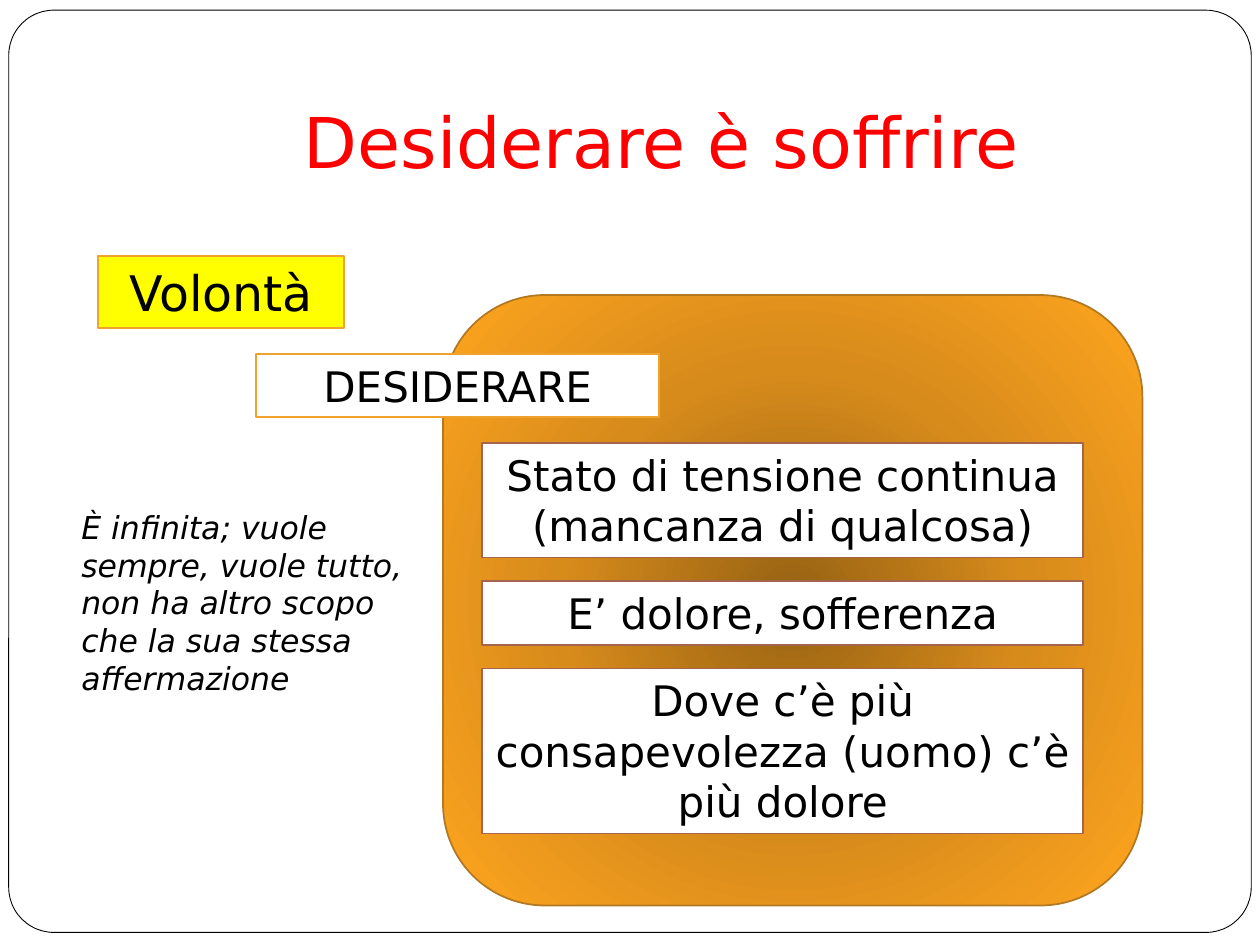
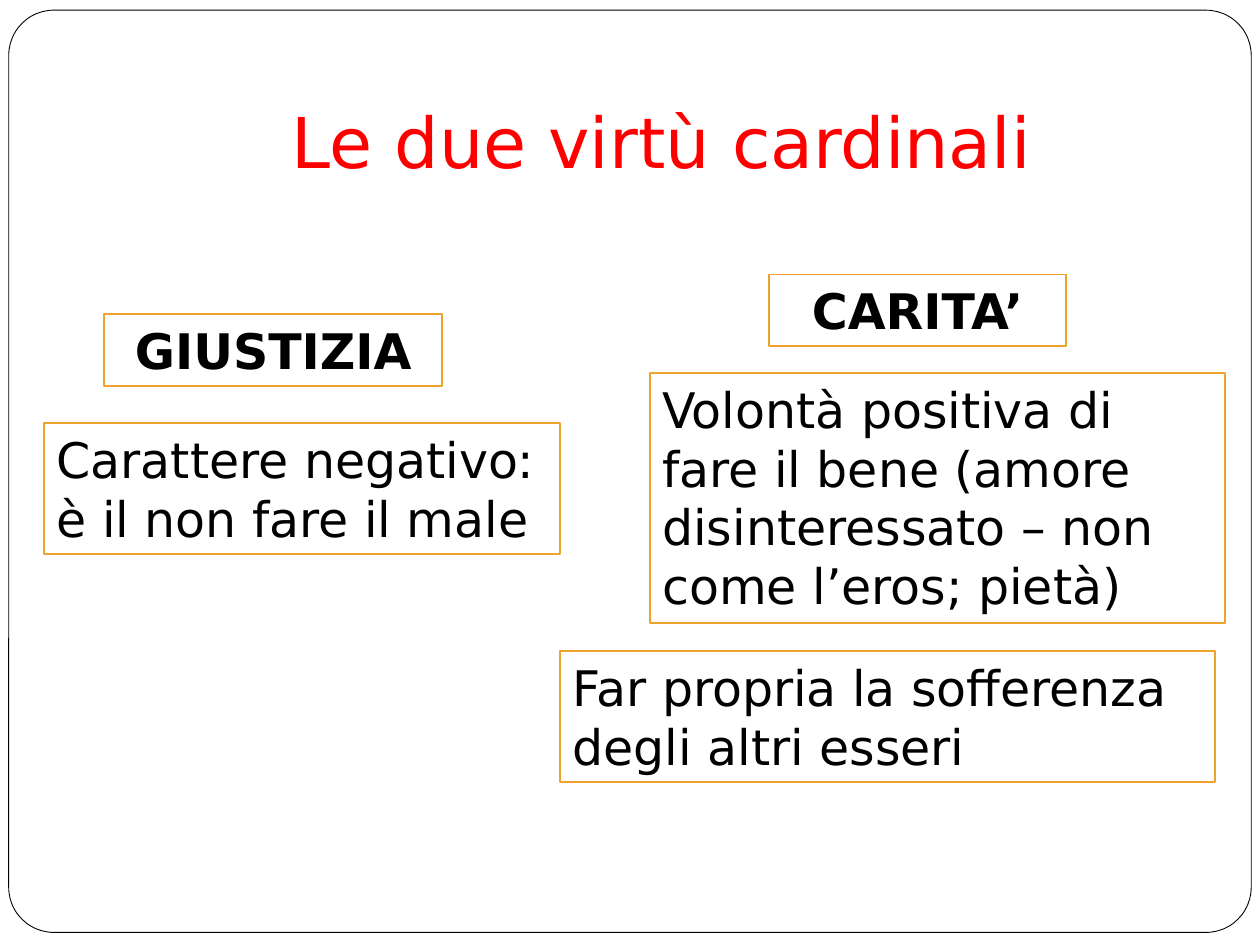
"""Build two slides on desire as suffering and the two cardinal virtues."""
from pptx import Presentation
from pptx.dml.color import RGBColor
from pptx.enum.shapes import MSO_SHAPE
from pptx.enum.text import MSO_ANCHOR, MSO_AUTO_SIZE, PP_ALIGN
from pptx.oxml import parse_xml
from pptx.oxml.ns import nsdecls, qn
from pptx.util import Pt

ROUNDED = MSO_SHAPE.ROUNDED_RECTANGLE
BOTTOM = MSO_ANCHOR.BOTTOM
GROW = MSO_AUTO_SIZE.SHAPE_TO_FIT_TEXT
LEFT, CENTER = PP_ALIGN.LEFT, PP_ALIGN.CENTER

WHITE = RGBColor(0xFF, 0xFF, 0xFF)
BLACK = RGBColor(0x00, 0x00, 0x00)
RED = RGBColor(0xFF, 0x00, 0x00)
YELLOW = RGBColor(0xFF, 0xFF, 0x00)
ORANGE = RGBColor(0xF0, 0xA2, 0x2E)
BROWN = RGBColor(0xA5, 0x64, 0x4E)
PANEL_LINE = RGBColor(0xB2, 0x78, 0x22)
PANEL_STOPS = (
    (0, RGBColor(0x97, 0x62, 0x13)),
    (50, RGBColor(0xD7, 0x8B, 0x1B)),
    (100, RGBColor(0xFF, 0xA5, 0x1F)),
)

FONT = "DejaVu Sans"
LINE_SPACING = 1.21
PADDING = 7.2


class Deck:
    """Hold the shared style and the current slide."""

    def __init__(self):
        self.prs = Presentation()
        self.prs.slide_width, self.prs.slide_height = Pt(720), Pt(540)
        self.s = None

    def slide(self):
        """Start a slide with its rounded frame."""
        self.s = self.prs.slides.add_slide(self.prs.slide_layouts[6])
        frame = self.rounded(5, 5.8, 710, 527, BLACK, 0.5)
        frame.adjustments[0] = 0.049
        frame.fill.solid()
        frame.fill.fore_color.rgb = WHITE

    def heading(self, text):
        """Add the slide title, resting on the bottom of its area."""
        sp = self.s.shapes.add_textbox(Pt(72), Pt(21.6), Pt(612), Pt(90))
        tf = sp.text_frame
        tf.vertical_anchor = BOTTOM
        tf.margin_bottom = Pt(PADDING)
        self.paragraph(tf, text, 40, RED, CENTER)

    def rounded(self, x, y, w, h, line, width):
        """Add an outlined rounded rectangle."""
        sp = self.s.shapes.add_shape(ROUNDED, Pt(x), Pt(y), Pt(w), Pt(h))
        sp.shadow.inherit = False
        sp.line.color.rgb = line
        sp.line.width = Pt(width)
        return sp

    def panel(self, x, y, w, h):
        """Add a rounded panel that shades from its centre outwards."""
        sp = self.rounded(x, y, w, h, PANEL_LINE, 1)
        sp.fill.gradient()
        stops = "".join(
            f'<a:gs pos="{pos * 1000}"><a:srgbClr val="{color}"/></a:gs>'
            for pos, color in PANEL_STOPS
        )
        grad = parse_xml(
            f'<a:gradFill {nsdecls("a")} rotWithShape="1"><a:gsLst>{stops}</a:gsLst>'
            '<a:path path="circle"><a:fillToRect l="50000" t="50000" r="50000" b="50000"/>'
            "</a:path></a:gradFill>"
        )
        sp_pr = sp._element.spPr
        sp_pr.replace(sp_pr.find(qn("a:gradFill")), grad)

    def paragraph(self, tf, text, size, color=BLACK, align=LEFT, bold=False, italic=False):
        """Fill a text frame with one wrapped paragraph."""
        tf.word_wrap = True
        p = tf.paragraphs[0]
        p.alignment = align
        r = p.add_run()
        r.text = text
        r.font.name = FONT
        r.font.size = Pt(size)
        r.font.bold = bold
        r.font.italic = italic
        r.font.color.rgb = color

    def note(self, x, y, w, lines, text, size, **style):
        """Add a text box as tall as its lines."""
        h = PADDING + lines * size * LINE_SPACING
        sp = self.s.shapes.add_textbox(Pt(x), Pt(y), Pt(w), Pt(h))
        sp.text_frame.auto_size = GROW
        self.paragraph(sp.text_frame, text, size, **style)
        return sp

    def box(self, x, y, w, lines, text, size=28, fill=WHITE, line=ORANGE, **style):
        """Add a filled and outlined text box and return its bottom edge."""
        sp = self.note(x, y, w, lines, text, size, **style)
        sp.fill.solid()
        sp.fill.fore_color.rgb = fill
        sp.line.color.rgb = line
        sp.line.width = Pt(1)
        return y + sp.height.pt


def desire(deck):
    """Build the slide on desire as suffering."""
    deck.slide()
    deck.panel(253.2, 168.6, 399.6, 348.8)
    deck.heading("Desiderare è soffrire")
    deck.box(56.2, 146.3, 140.6, 1, "Volontà", fill=YELLOW, align=CENTER)
    deck.box(146.4, 202.3, 230.4, 1, "DESIDERARE", size=24, align=CENTER)
    y = 253.3
    for lines, text in (
        (2, "Stato di tensione continua (mancanza di qualcosa)"),
        (1, "E’ dolore, sofferenza"),
        (3, "Dove c’è più consapevolezza (uomo) c’è più dolore"),
    ):
        y = 13.6 + deck.box(275.6, y, 343.4, lines, text, size=24, line=BROWN, align=CENTER)
    deck.note(
        39.4, 286.6, 202.4, 5,
        "È infinita; vuole sempre, vuole tutto, non ha altro scopo "
        "che la sua stessa affermazione",
        18, italic=True,
    )


def virtues(deck):
    """Build the slide on justice and charity."""
    deck.slide()
    deck.heading("Le due virtù cardinali")
    for x, y, w, name in (
        (59.6, 179.4, 193, "GIUSTIZIA"),
        (439.3, 156.8, 170, "CARITA’"),
    ):
        deck.box(x, y, w, 1, name, align=CENTER, bold=True)
    for x, y, w, lines, text in (
        (25.3, 241.8, 294.8, 2, "Carattere negativo: è il non fare il male"),
        (371.4, 213.2, 328.8, 4,
         "Volontà positiva di fare il bene (amore disinteressato – non come l’eros; pietà)"),
        (320.2, 372.1, 374.2, 2, "Far propria la sofferenza degli altri esseri"),
    ):
        deck.box(x, y, w, lines, text)


def main():
    """Build and save the presentation."""
    deck = Deck()
    desire(deck)
    virtues(deck)
    deck.prs.save("out.pptx")


if __name__ == "__main__":
    main()
